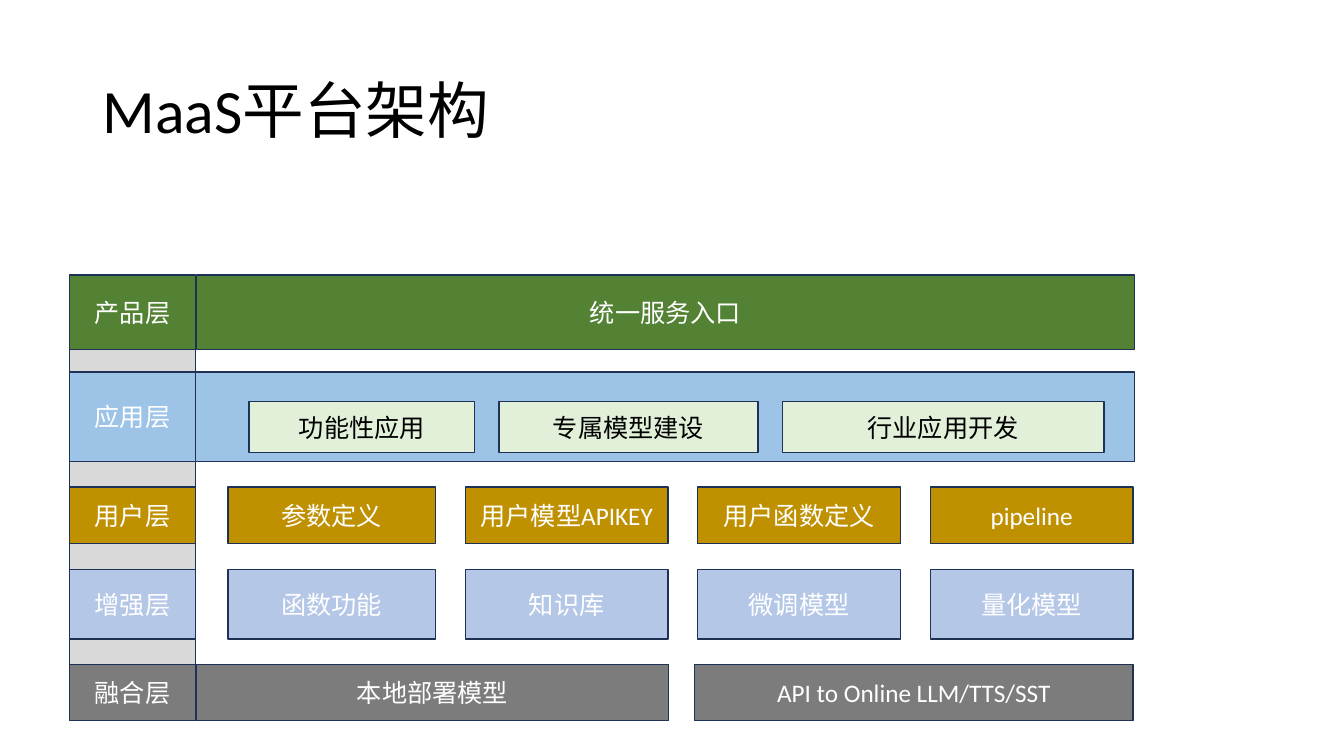
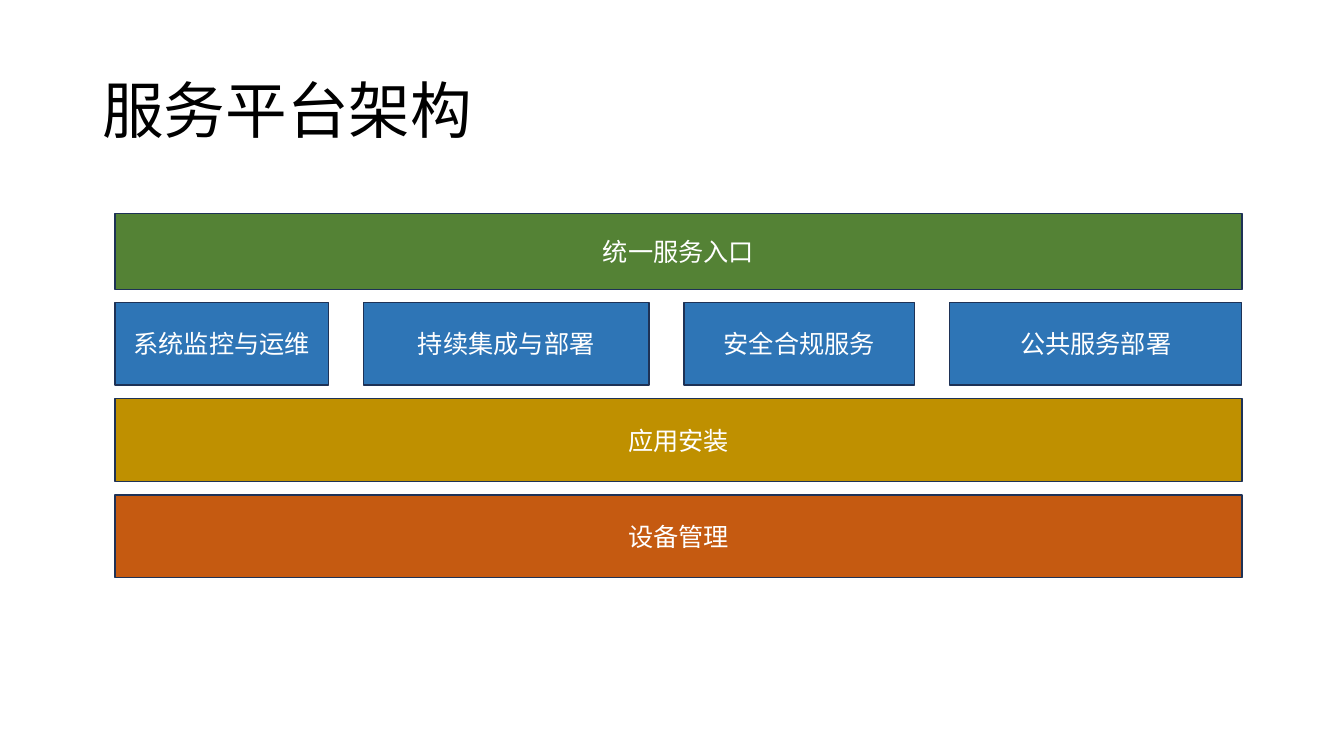
"""Build two slides of layered platform architecture."""
from pptx import Presentation
from pptx.dml.color import RGBColor
from pptx.enum.lang import MSO_LANGUAGE_ID
from pptx.enum.shapes import MSO_SHAPE
from pptx.enum.text import MSO_ANCHOR, PP_ALIGN
from pptx.util import Inches, Pt

WIDE, HIGH = Inches(13.33), Inches(7.5)
FONT = "Calibri"
HUES = {
    "edge": "1E3256", "white": "FFFFFF", "black": "000000", "spine": "D9D9D9",
    "green": "548235", "sky": "9DC3E6", "mint": "E2F0D9", "gold": "BF9000",
    "mist": "B4C7E7", "gray": "7C7C7C", "blue": "2E75B6", "rust": "C55A11",
}
SIDE, STEM = 5.16, 9.4
FOUR = (15.45, 15.08, 15.08, 15.08)

LAYERS = [
    ("融合层", "gray", 87.87, 7.47, 14.63, 1.95, (35.11, 32.63),
     ("本地部署模型", "API to Online LLM/TTS/SST")),
    ("增强层", "mist", 75.33, 9.2, 16.95, 2.22, FOUR,
     ("函数功能", "知识库", "微调模型", "量化模型")),
    ("用户层", "gold", 64.4, 7.47, 16.95, 2.22, FOUR,
     ("参数定义", "用户模型APIKEY", "用户函数定义", "pipeline")),
    ("应用层", "sky", 49.2, 11.87, 14.55, 0, (69.85,), ("",)),
    ("产品层", "green", 36.4, 9.8, 14.63, 0, (69.77,), ("统一服务入口",)),
]
APPS = ("功能性应用", "专属模型建设", "行业应用开发")

TIERS = [
    ("green", 28.27, 10, (83.87,), ("统一服务入口",)),
    ("blue", 40, 10.93, (15.9, 21.23, 17.18, 21.73),
     ("系统监控与运维", "持续集成与部署", "安全合规服务", "公共服务部署")),
    ("gold", 52.75, 10.93, (83.87,), ("应用安装",)),
    ("rust", 65.5, 10.93, (83.87,), ("设备管理",)),
]


def hue(name):
    """Return the named colour."""
    return RGBColor.from_string(HUES[name])


def area(left, top, wide, high):
    """Turn percentages of the slide into lengths."""
    return [round(part * full / 100) for part, full in
            zip((left, top, wide, high), (WIDE, HIGH, WIDE, HIGH))]


def write(frame, text, size=18, ink="white", align=PP_ALIGN.CENTER, space=1.0):
    """Put one formatted line of text, centred in height, into a frame."""
    frame.word_wrap = True
    frame.vertical_anchor = MSO_ANCHOR.MIDDLE
    para = frame.paragraphs[0]
    para.alignment, para.line_spacing = align, space
    run = para.add_run()
    run.text = text
    font = run.font
    font.name, font.size = FONT, Pt(size)
    font.color.rgb = hue(ink)
    font.language_id = MSO_LANGUAGE_ID.SIMPLIFIED_CHINESE


def box(slide, place, fill, text="", **style):
    """Draw a filled, outlined block with optional text."""
    shape = slide.shapes.add_shape(MSO_SHAPE.RECTANGLE, *area(*place))
    shape.shadow.inherit = False
    shape.fill.solid()
    shape.fill.fore_color.rgb = hue(fill)
    shape.line.color.rgb = hue("edge")
    shape.line.width = Pt(1)
    if text:
        write(shape.text_frame, text, **style)


def row(slide, left, top, high, gap, widths, texts, fill, **style):
    """Lay blocks side by side with an equal gap."""
    for wide, text in zip(widths, texts):
        box(slide, (left, top, wide, high), fill, text, **style)
        left += wide + gap


def page(deck, title):
    """Add a blank slide with the shared title style."""
    slide = deck.slides.add_slide(deck.slide_layouts[6])
    head = slide.shapes.add_textbox(*area(6.88, 5.33, 86.25, 19.33))
    write(head.text_frame, title, size=44, ink="black",
          align=PP_ALIGN.LEFT, space=0.9)
    return slide


def stack(deck):
    """Draw the layers of the model platform."""
    slide = page(deck, "MaaS平台架构")
    box(slide, (SIDE, 36.53, STEM, 58.8), "spine")
    for name, fill, top, high, left, gap, widths, texts in LAYERS:
        row(slide, left, top, high, gap, widths, texts, fill)
        box(slide, (SIDE, top, STEM, high), fill, name)
    row(slide, 18.53, 53.07, 6.8, 1.8, (16.8, 19.28, 23.93), APPS,
        "mint", ink="black")


def tiers(deck):
    """Draw the tiers of the service platform."""
    slide = page(deck, "服务平台架构")
    for fill, top, high, widths, texts in TIERS:
        row(slide, 8.55, top, high, 2.6, widths, texts, fill)


def main():
    """Build and save the deck."""
    deck = Presentation()
    deck.slide_width, deck.slide_height = WIDE, HIGH
    stack(deck)
    tiers(deck)
    deck.save("out.pptx")


if __name__ == "__main__":
    main()
